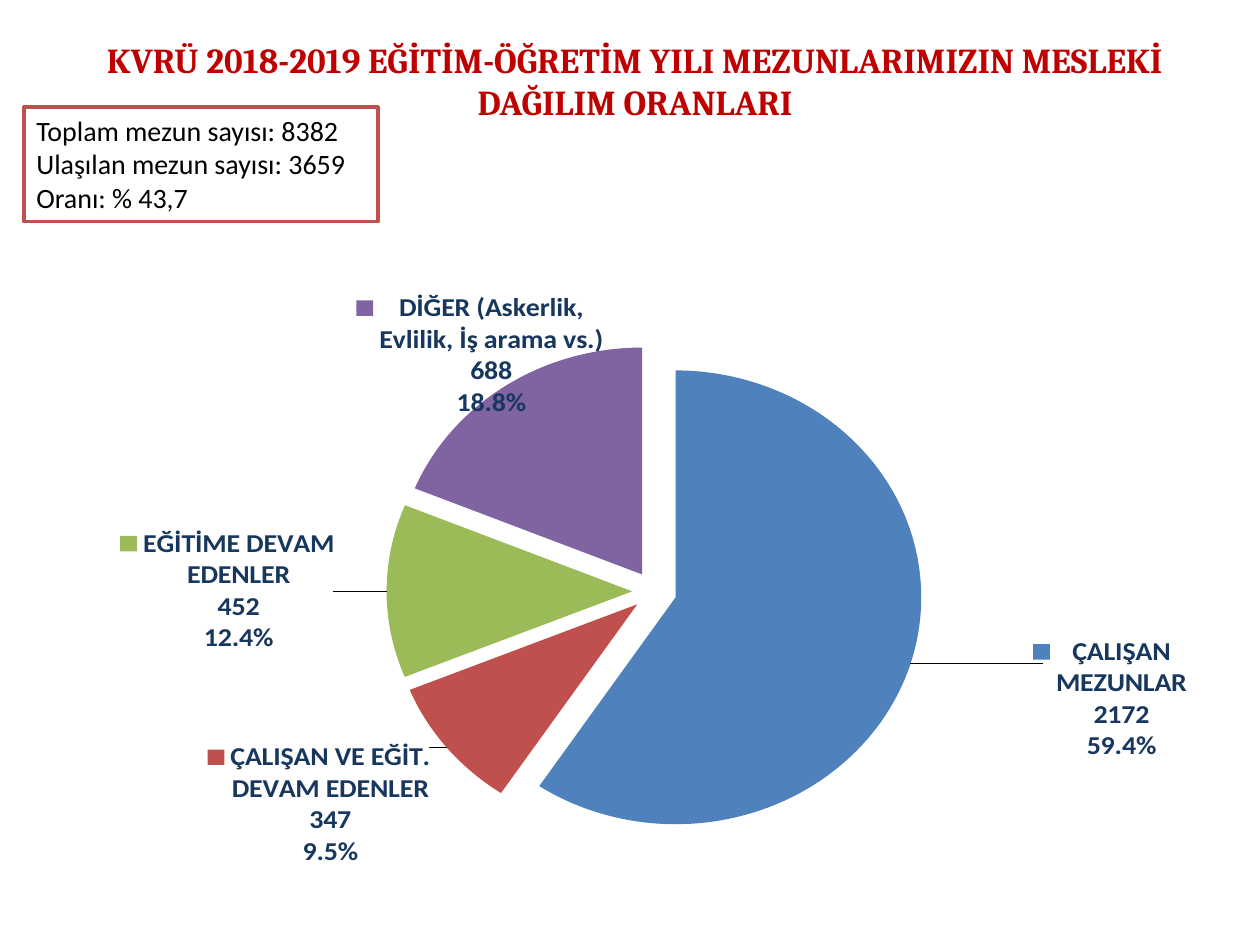
from lxml.etree import SubElement
from pptx import Presentation
from pptx.chart.data import CategoryChartData
from pptx.dml.color import RGBColor
from pptx.enum.chart import XL_CHART_TYPE
from pptx.enum.shapes import MSO_SHAPE
from pptx.enum.text import MSO_ANCHOR, PP_ALIGN
from pptx.oxml import parse_xml
from pptx.oxml.ns import nsdecls, qn
from pptx.util import Pt

WHITE = RGBColor(0xFF, 0xFF, 0xFF)
BLACK = RGBColor(0x00, 0x00, 0x00)
DARK_RED = RGBColor(0xC0, 0x00, 0x00)
BLUE = RGBColor(0x4F, 0x81, 0xBD)
RED = RGBColor(0xC0, 0x50, 0x4D)
GREEN = RGBColor(0x9B, 0xBB, 0x59)
PURPLE = RGBColor(0x80, 0x64, 0xA2)
NAVY = RGBColor(0x17, 0x37, 0x5E)

GRADUATES = [
    ("ÇALIŞAN MEZUNLAR", 2172, BLUE, (0.11, -0.05)),
    ("ÇALIŞAN VE EĞİT. DEVAM EDENLER", 347, RED, (-0.01, -0.01)),
    ("EĞİTİME DEVAM EDENLER", 452, GREEN, (-0.04, 0)),
    ("DİĞER (Askerlik, Evlilik, İş arama vs.)", 688, PURPLE, (0.09, 0.05)),
]
PLOT_AREA = {"x": 0.09, "y": 0.09, "w": 0.88, "h": 0.86}


def add_box(page, left, top, width, height, line=None):
    box = page.shapes.add_shape(
        MSO_SHAPE.RECTANGLE, Pt(left), Pt(top), Pt(width), Pt(height))
    box.shadow.inherit = False
    box.fill.solid()
    box.fill.fore_color.rgb = WHITE
    if line is None:
        box.line.fill.background()
    else:
        box.line.color.rgb = line
        box.line.width = Pt(2)
    box.text_frame.word_wrap = True
    box.text_frame.vertical_anchor = MSO_ANCHOR.MIDDLE
    return box


def write_lines(box, lines, font, size, color, align, bold=False):
    frame = box.text_frame
    for number, text in enumerate(lines):
        para = frame.add_paragraph() if number else frame.paragraphs[0]
        para.alignment = align
        span = para.add_run()
        span.text = text
        span.font.name = font
        span.font.size = Pt(size)
        span.font.bold = bold
        span.font.color.rgb = color


def manual_layout(values):
    parts = "".join(f'<c:{key} val="{value}"/>' for key, value in values.items())
    return f"<c:layout><c:manualLayout>{parts}</c:manualLayout></c:layout>"


def label_settings():
    return (
        '<c:numFmt formatCode="0.0%" sourceLinked="0"/>'
        '<c:spPr><a:noFill/><a:ln><a:noFill/></a:ln></c:spPr>'
        '<c:txPr><a:bodyPr/><a:p><a:pPr><a:defRPr sz="1600" b="1">'
        f'<a:solidFill><a:srgbClr val="{NAVY}"/></a:solidFill>'
        '<a:latin typeface="Calibri"/></a:defRPr></a:pPr>'
        '<a:endParaRPr lang="tr-TR"/></a:p></c:txPr>'
        '<c:dLblPos val="outEnd"/><c:showLegendKey val="1"/>'
        '<c:showVal val="1"/><c:showCatName val="1"/><c:showSerName val="0"/>'
        '<c:showPercent val="1"/><c:showBubbleSize val="0"/>'
        '<c:separator>\n</c:separator>')


def add_labels(series):
    labels = "".join(
        f'<c:dLbl><c:idx val="{number}"/>{manual_layout({"x": x, "y": y})}'
        f'{label_settings()}</c:dLbl>'
        for number, (_, _, _, (x, y)) in enumerate(GRADUATES))
    element = parse_xml(
        f'<c:dLbls {nsdecls("c", "a")}>{labels}{label_settings()}'
        '<c:showLeaderLines val="1"/></c:dLbls>')
    series._element.find(qn("c:cat")).addprevious(element)


def explode_slices(series, percent):
    element = parse_xml(f'<c:explosion {nsdecls("c")} val="{percent}"/>')
    series._element.find(qn("c:tx")).addnext(element)


def place_plot(chart):
    area = chart._chartSpace.chart.plotArea
    for old in area.findall(qn("c:layout")):
        area.remove(old)
    layout = SubElement(area, qn("c:layout"))
    manual = SubElement(layout, qn("c:manualLayout"))
    settings = {"layoutTarget": "inner", "xMode": "edge", "yMode": "edge", **PLOT_AREA}
    for key, value in settings.items():
        SubElement(manual, qn(f"c:{key}")).set("val", str(value))
    area.insert(0, layout)


def add_pie(page, left, top, width, height):
    data = CategoryChartData()
    data.categories = [name for name, _, _, _ in GRADUATES]
    data.add_series("Series 1", [count for _, count, _, _ in GRADUATES])
    chart = page.shapes.add_chart(
        XL_CHART_TYPE.PIE, Pt(left), Pt(top), Pt(width), Pt(height), data).chart
    chart.has_title = False
    chart.has_legend = False
    chart.font.name = "Calibri"
    chart.font.size = Pt(18)
    chart.font.color.rgb = WHITE
    plot = chart.plots[0]
    plot.vary_by_categories = True
    series = plot.series[0]
    explode_slices(series, 9)
    for number, (_, _, color, _) in enumerate(GRADUATES):
        fill = series.points[number].format.fill
        fill.solid()
        fill.fore_color.rgb = color
    add_labels(series)
    place_plot(chart)


def main():
    deck = Presentation()
    deck.slide_width = Pt(720)
    deck.slide_height = Pt(540)
    page = deck.slides.add_slide(deck.slide_layouts[6])

    title = add_box(page, 25.2, 9.4, 675.4, 73.4)
    title.text_frame.margin_left = title.text_frame.margin_right = Pt(8.6)
    title.text_frame.margin_top = title.text_frame.margin_bottom = Pt(4.3)
    write_lines(
        title,
        ["KVRÜ 2018-2019 EĞİTİM-ÖĞRETİM YILI MEZUNLARIMIZIN MESLEKİ DAĞILIM ORANLARI"],
        "Cambria", 20, DARK_RED, PP_ALIGN.CENTER, bold=True)

    summary = add_box(page, 13.7, 61.2, 202.3, 65.5, line=RED)
    summary.text_frame.vertical_anchor = MSO_ANCHOR.TOP
    write_lines(
        summary,
        ["Toplam mezun sayısı: 8382 Ulaşılan mezun sayısı: 3659", "Oranı: % 43,7"],
        "Calibri", 16, BLACK, PP_ALIGN.LEFT)

    add_pie(page, 31, 145.4, 648, 356.4)
    deck.save("out.pptx")


if __name__ == "__main__":
    main()
